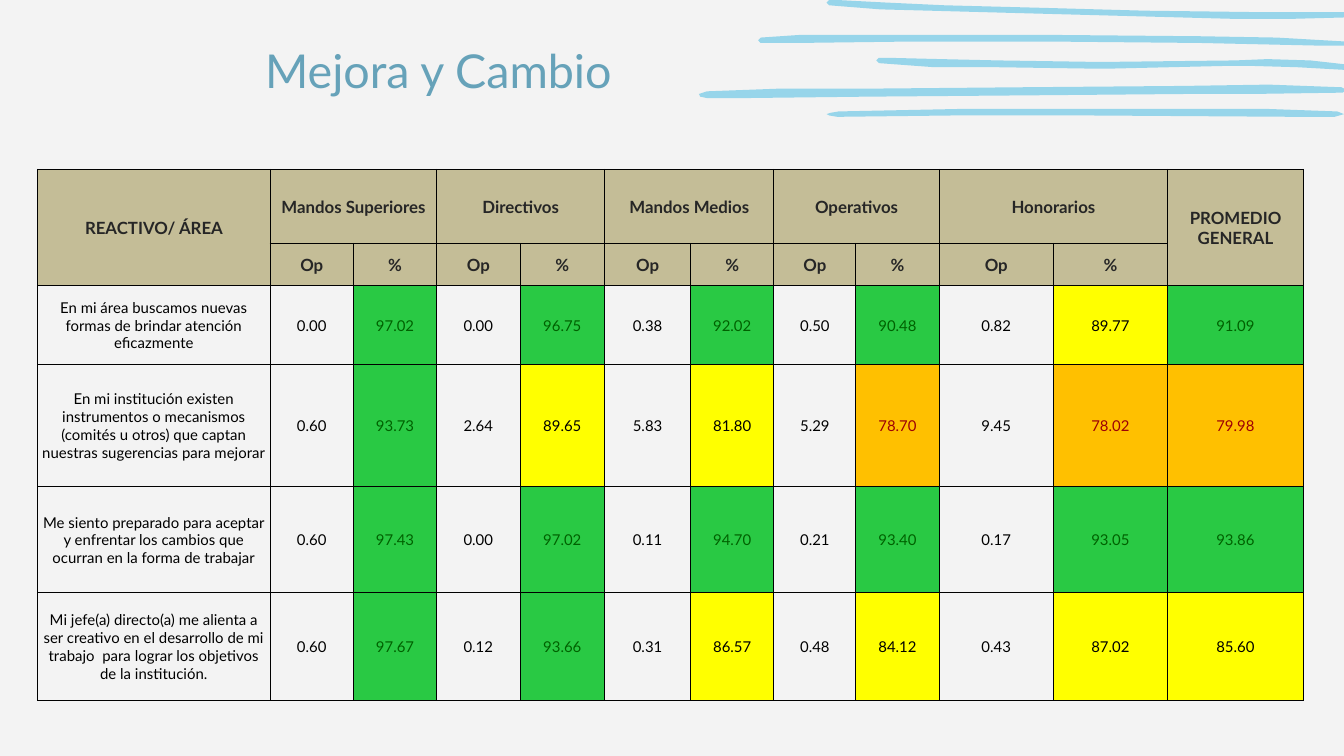
import pptx
import pptx.dml.color
import pptx.enum.text
import pptx.oxml
import pptx.oxml.ns
import pptx.util

Inches = pptx.util.Inches
RGBColor = pptx.dml.color.RGBColor
ALIGN = pptx.enum.text.PP_ALIGN
MIDDLE = pptx.enum.text.MSO_ANCHOR.MIDDLE

FONT = "Lato"
BACKGROUND = RGBColor(0xF3, 0xF3, 0xF3)
STROKE_BLUE = RGBColor(0x97, 0xD5, 0xEA)
TITLE_BLUE = RGBColor(0x66, 0xA2, 0xB9)
HEADER_TAN = RGBColor(0xC4, 0xBD, 0x97)
HEADER_TEXT = RGBColor(0x26, 0x26, 0x26)
BLACK = RGBColor(0, 0, 0)
GREEN = RGBColor(0x29, 0xC9, 0x44)
GREEN_TEXT = RGBColor(0, 0x61, 0)
YELLOW = RGBColor(0xFF, 0xFF, 0)
ORANGE = RGBColor(0xFF, 0xC0, 0)
RED_TEXT = RGBColor(0x9C, 0, 0x06)

# Outlines of the brush strokes, in inches, clockwise from the left tip
BRUSH_STROKES = [
    [(6.15, 0.85), (6.18, 0.84), (6.24, 0.83), (7.2, 0.81), (8.14, 0.81), (8.77, 0.81),
     (9.4, 0.81), (9.95, 0.83), (10, 0.85), (9.93, 0.87), (9.65, 0.87), (8.09, 0.86),
     (7.92, 0.86), (7.1, 0.86), (6.23, 0.87), (6.17, 0.86)],
    [(5.2, 0.7), (5.26, 0.68), (5.8, 0.66), (6.47, 0.66), (7.61, 0.65), (8.8, 0.64),
     (9.44, 0.63), (9.98, 0.65), (10.02, 0.67), (9.99, 0.69), (9.31, 0.7), (8.83, 0.7),
     (7.65, 0.71), (6.44, 0.72), (5.56, 0.73), (5.26, 0.73), (5.21, 0.72)],
    [(6.52, 0.45), (6.54, 0.43), (6.6, 0.43), (7, 0.44), (7.43, 0.45), (8.1, 0.46),
     (8.3, 0.46), (9.19, 0.45), (9.43, 0.44), (9.75, 0.45), (10.02, 0.48), (10.03, 0.5),
     (10.01, 0.52), (9.65, 0.5), (9.29, 0.49), (9.15, 0.49), (8.29, 0.51),
     (8.08, 0.51), (7.41, 0.5), (6.95, 0.5), (6.54, 0.47)],
    [(5.64, 0.3), (5.66, 0.28), (5.95, 0.26), (6.26, 0.26), (7.2, 0.26), (7.84, 0.26),
     (8.93, 0.27), (9.5, 0.28), (10.02, 0.31), (10.03, 0.33), (10.02, 0.34),
     (9.83, 0.34), (8.93, 0.32), (7.84, 0.31), (6.75, 0.31), (5.93, 0.32),
     (5.66, 0.32)],
    [(6.15, 0.02), (6.17, 0), (6.22, 0), (6.6, 0.02), (7.03, 0.04), (7.8, 0.06),
     (8.52, 0.08), (9.3, 0.09), (10.02, 0.09), (10.03, 0.11), (10.02, 0.13),
     (9.63, 0.14), (9.16, 0.14), (7.66, 0.1), (6.92, 0.08), (6.55, 0.07),
     (6.17, 0.04)],
]

COLUMN_WIDTHS = [1.73, 0.62, 0.62, 0.62, 0.63, 0.64, 0.62, 0.61, 0.62, 0.85, 0.85, 1.01]
ROW_HEIGHTS = [0.55, 0.24, 0.59, 0.91, 0.79, 0.8]
AREAS = ["Mandos Superiores", "Directivos", "Mandos Medios", "Operativos", "Honorarios"]
# Each statement: Op and % for every area, then the general average
RESULTS = [
    ("En mi área buscamos nuevas formas de brindar atención eficazmente",
     [0.00, 97.02, 0.00, 96.75, 0.38, 92.02, 0.50, 90.48, 0.82, 89.77, 91.09]),
    ("En mi institución existen instrumentos o mecanismos (comités u otros) "
     "que captan nuestras sugerencias para mejorar",
     [0.60, 93.73, 2.64, 89.65, 5.83, 81.80, 5.29, 78.70, 9.45, 78.02, 79.98]),
    ("Me siento preparado para aceptar y enfrentar los cambios que ocurran "
     "en la forma de trabajar",
     [0.60, 97.43, 0.00, 97.02, 0.11, 94.70, 0.21, 93.40, 0.17, 93.05, 93.86]),
    ("Mi jefe(a) directo(a) me alienta a ser creativo en el desarrollo de mi "
     "trabajo  para lograr los objetivos de la institución.",
     [0.60, 97.67, 0.12, 93.66, 0.31, 86.57, 0.48, 84.12, 0.43, 87.02, 85.60]),
]


def write_text(frame, text, size=8, color=BLACK, bold=False, align=ALIGN.CENTER):
    paragraph = frame.paragraphs[0]
    paragraph.alignment = align
    run = paragraph.add_run()
    run.text = text
    run.font.name = FONT
    run.font.size = pptx.util.Pt(size)
    run.font.bold = bold
    run.font.color.rgb = color


def add_brush_stroke(slide, outline):
    points = [(Inches(x), Inches(y)) for x, y in outline]
    builder = slide.shapes.build_freeform(*points[0])
    builder.add_line_segments(points[1:], close=True)
    stroke = builder.convert_to_shape()
    stroke.shadow.inherit = False
    stroke.fill.solid()
    stroke.fill.fore_color.rgb = STROKE_BLUE
    stroke.line.fill.background()


def add_title(slide, text):
    title = slide.shapes.title
    title.left, title.top = Inches(0), Inches(0.21)
    title.width, title.height = Inches(4.65), Inches(0.62)
    frame = title.text_frame
    frame.margin_left = frame.margin_right = Inches(0.1)
    frame.margin_top = frame.margin_bottom = Inches(0.1)
    frame.vertical_anchor = MIDDLE
    write_text(frame, text, size=25, color=TITLE_BLUE, align=ALIGN.RIGHT)


def frame_cell(cell):
    """Set the narrow margins and thin black borders of a cell."""
    cell.margin_left = cell.margin_top = cell.margin_right = Inches(0.01)
    cell.margin_bottom = 0
    cell.vertical_anchor = MIDDLE
    properties = cell._tc.get_or_add_tcPr()
    for side in ("lnL", "lnR", "lnT", "lnB"):
        properties.append(pptx.oxml.parse_xml(
            f'<a:{side} {pptx.oxml.ns.nsdecls("a")} w="6350"><a:solidFill>'
            f'<a:srgbClr val="{BLACK}"/></a:solidFill></a:{side}>'))


def fill_cell(cell, text, fill=None, **text_format):
    if fill is None:
        cell.fill.background()
    else:
        cell.fill.solid()
        cell.fill.fore_color.rgb = fill
    write_text(cell.text_frame, text, **text_format)


def fill_header(cell, text, last_cell=None):
    if last_cell is not None:
        cell.merge(last_cell)
    fill_cell(cell, text, fill=HEADER_TAN, size=9, color=HEADER_TEXT, bold=True)


def rating_colors(percent):
    """Return the fill and text colours of a score."""
    if percent >= 90:
        return GREEN, GREEN_TEXT
    if percent >= 80:
        return YELLOW, BLACK
    return ORANGE, RED_TEXT


def add_results_table(slide):
    table = slide.shapes.add_table(
        len(ROW_HEIGHTS), len(COLUMN_WIDTHS), Inches(0.28), Inches(1.26),
        Inches(sum(COLUMN_WIDTHS)), Inches(sum(ROW_HEIGHTS))).table
    table.first_row = table.horz_banding = False
    for column, width in zip(table.columns, COLUMN_WIDTHS):
        column.width = Inches(width)
    for row, height in zip(table.rows, ROW_HEIGHTS):
        row.height = Inches(height)
    for cell in table.iter_cells():
        frame_cell(cell)

    # Two header rows
    average = len(COLUMN_WIDTHS) - 1
    fill_header(table.cell(0, 0), "REACTIVO/ ÁREA", table.cell(1, 0))
    fill_header(table.cell(0, average), "PROMEDIO GENERAL", table.cell(1, average))
    for index, area in enumerate(AREAS):
        left = 1 + 2 * index
        fill_header(table.cell(0, left), area, table.cell(0, left + 1))
        fill_header(table.cell(1, left), "Op")
        fill_header(table.cell(1, left + 1), "%")

    # Statements and scores
    for row, (statement, scores) in enumerate(RESULTS, start=2):
        fill_cell(table.cell(row, 0), statement)
        for column, score in enumerate(scores, start=1):
            is_rated = column % 2 == 0 or column == average
            fill, color = rating_colors(score) if is_rated else (None, BLACK)
            fill_cell(table.cell(row, column), f"{score:.2f}", fill=fill, color=color)


def main():
    presentation = pptx.Presentation()
    presentation.slide_width = Inches(10)
    presentation.slide_height = Inches(10) * 9 // 16
    slide = presentation.slides.add_slide(presentation.slide_layouts.get_by_name("Title Only"))
    slide.background.fill.solid()
    slide.background.fill.fore_color.rgb = BACKGROUND

    for outline in BRUSH_STROKES:
        add_brush_stroke(slide, outline)
    add_title(slide, "Mejora y Cambio")
    add_results_table(slide)
    presentation.save("out.pptx")


if __name__ == "__main__":
    main()
